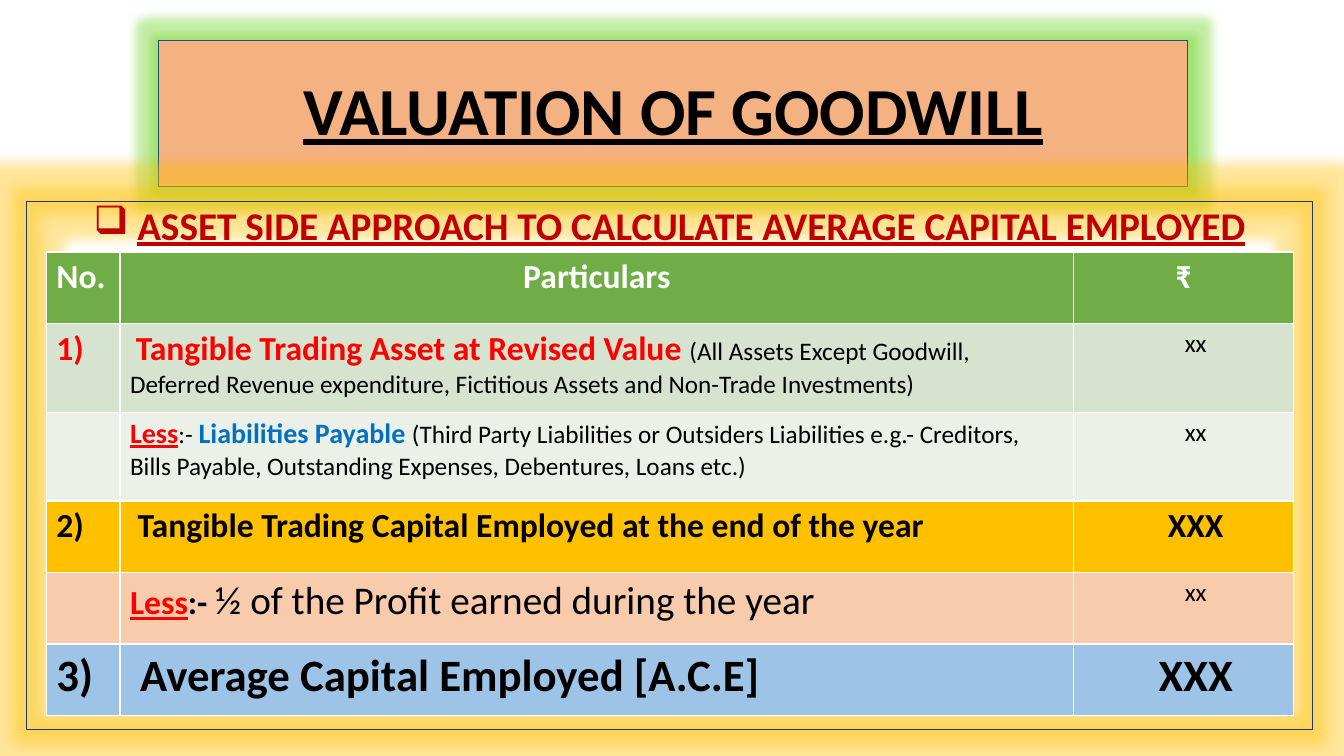
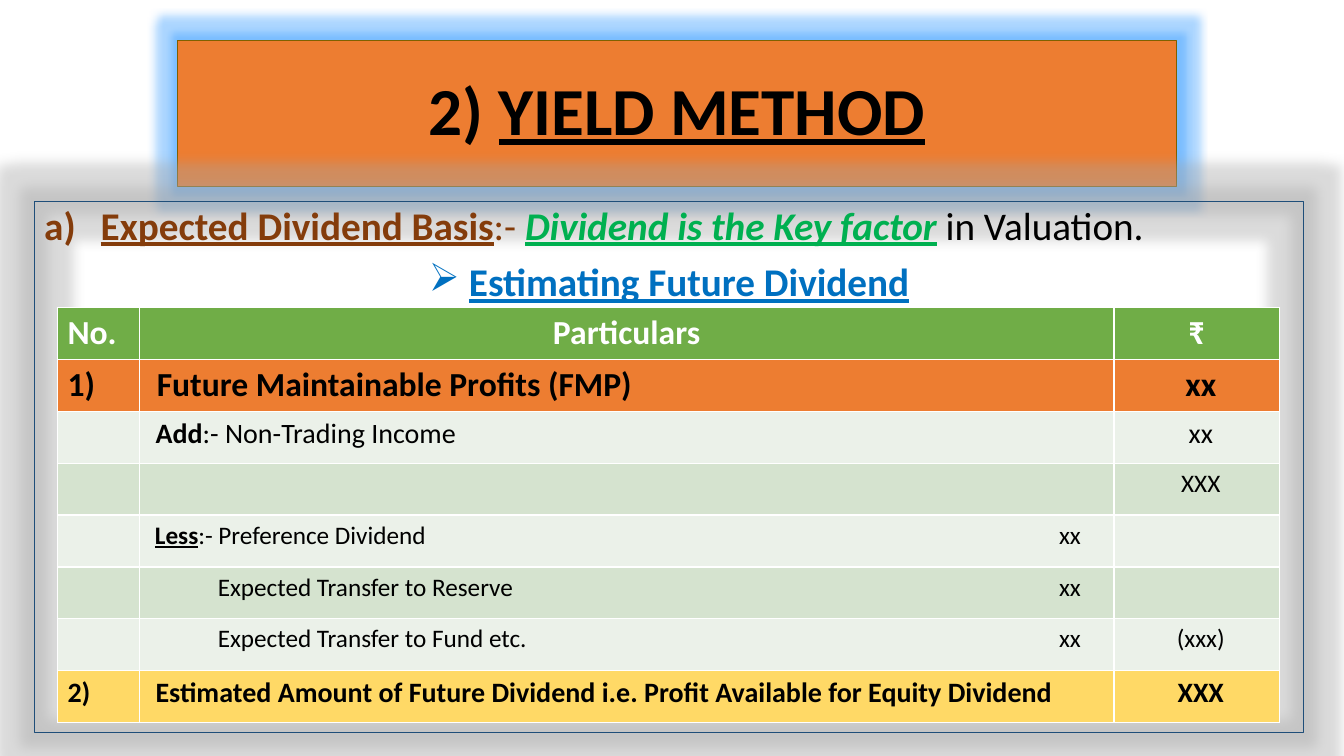
from lxml.etree import SubElement
from pptx import Presentation
from pptx.dml.color import RGBColor
from pptx.enum.shapes import MSO_SHAPE
from pptx.enum.text import MSO_ANCHOR, PP_ALIGN
from pptx.oxml.ns import qn
from pptx.util import Inches, Pt


class Theme:
    FONT = "Calibri"
    BLACK, WHITE = "000000", "FFFFFF"
    RED, DARK_RED, BROWN = "FF0000", "C00000", "843C0B"
    BLUE, GREEN = "0070C0", "00B050"
    HEADER, BAND_DARK, BAND_LIGHT = "70AD47", "D5E3CF", "EBF1E9"
    GOLD, PALE_GOLD = "FFC000", "FFD966"
    PEACH, SALMON, ORANGE, SKY = "F8CBAD", "F4B181", "ED7D31", "9DC3E6"
    NAVY, STEEL, OLIVE = "203864", "1F4E79", "806000"
    GLOW_LIME, GLOW_BLUE, GLOW_GREY = "6BD31F", "3199FF", "A5A5A5"
    TITLE, TOTAL, HEADING, ROW, SUBROW, DETAIL = 48, 32, 28, 24, 20, 18
    TITLE_GLOW, PANEL_GLOW = 11, 18


T = Theme


def add_runs(p, runs):
    """Each run is (text, size, colour, flags); flags hold b, i and u."""
    for text, size, color, flags in runs:
        r = p.add_run()
        r.text = text
        r.font.name = T.FONT
        r.font.size = Pt(size)
        r.font.color.rgb = RGBColor.from_string(color)
        r.font.bold = "b" in flags
        r.font.italic = "i" in flags
        r.font.underline = "u" in flags


def add_glow_box(s, box, line, glow, radius, fill=None):
    sp = s.shapes.add_shape(MSO_SHAPE.RECTANGLE, *map(Inches, box))
    if fill:
        sp.fill.solid()
        sp.fill.fore_color.rgb = RGBColor.from_string(fill)
    else:
        sp.fill.background()
    sp.line.color.rgb = RGBColor.from_string(line)
    sp.line.width = Pt(0.75)
    sp.shadow.inherit = False
    effects = sp._element.spPr.find(qn("a:effectLst"))
    halo = SubElement(effects, qn("a:glow"), rad=str(Pt(radius)))
    tint = SubElement(halo, qn("a:srgbClr"), val=glow)
    SubElement(tint, qn("a:alpha"), val="40000")
    sp.text_frame.word_wrap = True
    return sp.text_frame


CHECKBOX = ("buChar", {"char": "❑"})
ARROW = ("buChar", {"char": "➢"})
LETTER = ("buAutoNum", {"type": "alphaLcParenR"})

slides = [
    {
        "title_box": (1.57, 0.4, 10.21, 1.45),
        "title_look": (T.STEEL, T.GLOW_LIME, T.TITLE_GLOW, T.SALMON),
        "title": [("VALUATION OF GOODWILL", T.TITLE, T.BLACK, "bu")],
        "panel_box": (0.26, 2, 12.76, 5.24),
        "panel_look": (T.NAVY, T.GOLD, T.PANEL_GLOW),
        "headings": [
            (CHECKBOX, PP_ALIGN.CENTER, 0.25, [
                (" ", T.HEADING, T.DARK_RED, "b"),
                ("ASSET SIDE APPROACH TO CALCULATE AVERAGE CAPITAL EMPLOYED",
                 T.HEADING, T.DARK_RED, "bu")]),
        ],
        "table_at": (0.46, 2.5),
        "cols": (0.73, 9.46, 2.18),
        "row_heights": (0.71, 0.88, 0.88, 0.71, 0.71, 0.71),
        "amount_inset": 0.34,
        "rows": [
            (T.BAND_DARK,
             [("1)", T.ROW, T.RED, "b")],
             [(" ", T.DETAIL, T.BLACK, ""),
              ("Tangible Trading Asset at Revised Value ", T.ROW, T.RED, "b"),
              ("(All Assets Except Goodwill, Deferred Revenue expenditure, "
               "Fictitious Assets and Non-Trade Investments)", T.DETAIL, T.BLACK, "")],
             [("xx", T.DETAIL, T.BLACK, "")]),
            (T.BAND_LIGHT,
             [],
             [("Less", T.SUBROW, T.RED, "bu"),
              (":- ", T.DETAIL, T.BLACK, ""),
              ("Liabilities Payable ", T.SUBROW, T.BLUE, "b"),
              ("(Third Party Liabilities or Outsiders Liabilities e.g.- Creditors, "
               "Bills Payable, Outstanding Expenses, Debentures, Loans etc.)",
               T.DETAIL, T.BLACK, "")],
             [("xx", T.DETAIL, T.BLACK, "")]),
            (T.GOLD,
             [("2)", T.ROW, T.BLACK, "b")],
             [(" Tangible Trading Capital Employed at the end of the year",
               T.ROW, T.BLACK, "b")],
             [("XXX", T.ROW, T.BLACK, "b")]),
            (T.PEACH,
             [],
             [("Less", T.ROW, T.RED, "bu"),
              (":- ", T.ROW, T.BLACK, "b"),
              ("½ of the Profit earned during the year", T.HEADING, T.BLACK, "")],
             [("xx", T.DETAIL, T.BLACK, "")]),
            (T.SKY,
             [("3)", T.TOTAL, T.BLACK, "b")],
             [(" Average Capital Employed [A.C.E]", T.TOTAL, T.BLACK, "b")],
             [("XXX", T.TOTAL, T.BLACK, "b")]),
        ],
    },
    {
        "title_box": (1.76, 0.4, 9.91, 1.45),
        "title_look": (T.OLIVE, T.GLOW_BLUE, T.TITLE_GLOW, T.ORANGE),
        "title": [("2) ", T.TITLE, T.BLACK, "b"),
                  ("YIELD METHOD", T.TITLE, T.BLACK, "bu")],
        "panel_box": (0.34, 2, 12.59, 5.27),
        "panel_look": (T.STEEL, T.GLOW_GREY, T.PANEL_GLOW),
        "headings": [
            (LETTER, PP_ALIGN.LEFT, 0.56, [
                ("Expected Dividend Basis", T.HEADING, T.BROWN, "bu"),
                (":- ", T.HEADING, T.BROWN, ""),
                ("Dividend is the Key factor", T.HEADING, T.GREEN, "biu"),
                (" in Valuation.", T.HEADING, T.BLACK, "")]),
            (ARROW, PP_ALIGN.CENTER, 0.25, [
                (" ", T.HEADING, T.BLUE, "b"),
                ("Estimating Future Dividend", T.HEADING, T.BLUE, "bu")]),
        ],
        "table_at": (0.57, 3.05),
        "cols": (0.81, 9.67, 1.64),
        "row_heights": (0.515,) * 8,
        "amount_inset": 0.18,
        "rows": [
            (T.ORANGE,
             [("1)", T.ROW, T.BLACK, "b")],
             [(" Future Maintainable Profits (FMP)", T.ROW, T.BLACK, "b")],
             [("xx", T.ROW, T.BLACK, "b")]),
            (T.BAND_LIGHT,
             [],
             [(" ", T.SUBROW, T.BLACK, ""),
              ("Add", T.SUBROW, T.BLACK, "b"),
              (":- Non-Trading Income", T.SUBROW, T.BLACK, "")],
             [("xx", T.SUBROW, T.BLACK, "")]),
            (T.BAND_DARK, [], [], [("XXX", T.DETAIL, T.BLACK, "")]),
            (T.BAND_LIGHT,
             [],
             [(" ", T.DETAIL, T.BLACK, ""),
              ("Less", T.DETAIL, T.BLACK, "bu"),
              (":- Preference Dividend\txx", T.DETAIL, T.BLACK, "")],
             []),
            (T.BAND_DARK,
             [],
             [("\tExpected Transfer to Reserve\txx", T.DETAIL, T.BLACK, "")],
             []),
            (T.BAND_LIGHT,
             [],
             [("\tExpected Transfer to Fund etc.\txx", T.DETAIL, T.BLACK, "")],
             [("(xxx)", T.DETAIL, T.BLACK, "")]),
            (T.PALE_GOLD,
             [("2)", T.SUBROW, T.BLACK, "b")],
             [(" Estimated Amount of Future Dividend i.e. Profit Available for "
               "Equity Dividend", T.SUBROW, T.BLACK, "b")],
             [("XXX", T.SUBROW, T.BLACK, "b")]),
        ],
    },
]

header = (T.HEADER, *([(label, T.ROW, T.WHITE, "b")]
                      for label in ("No.", "Particulars", "₹")))
tab_stops = ((0.68, "l"), (9.24, "r"))

prs = Presentation()
prs.slide_width, prs.slide_height = Inches(13.33), Inches(7.5)

for page in slides:
    s = prs.slides.add_slide(prs.slide_layouts[6])

    tf = add_glow_box(s, page["title_box"], *page["title_look"])
    tf.vertical_anchor = MSO_ANCHOR.MIDDLE
    p = tf.paragraphs[0]
    p.alignment = PP_ALIGN.CENTER
    p.line_spacing = 0.9
    add_runs(p, page["title"])

    tf = add_glow_box(s, page["panel_box"], *page["panel_look"])
    tf.vertical_anchor = MSO_ANCHOR.TOP
    for i, (bullet, align, indent, runs) in enumerate(page["headings"]):
        p = tf.add_paragraph() if i else tf.paragraphs[0]
        p.alignment = align
        p.line_spacing = 0.9
        p.space_before = Pt(10)
        pPr = p._p.get_or_add_pPr()
        pPr.set("marL", str(Inches(indent)))
        pPr.set("indent", str(-Inches(indent)))
        tag, attributes = bullet
        SubElement(pPr, qn("a:" + tag), attributes)
        add_runs(p, runs)

    cols, heights = page["cols"], page["row_heights"]
    left, top = page["table_at"]
    table = s.shapes.add_table(len(heights), len(cols), Inches(left), Inches(top),
                               Inches(sum(cols)), Inches(sum(heights))).table
    table.horz_banding = False
    for column, width in zip(table.columns, cols):
        column.width = Inches(width)
    for row, height in zip(table.rows, heights):
        row.height = Inches(height)

    for y, (fill, *contents) in enumerate([header] + page["rows"]):
        for x, runs in enumerate(contents):
            cell = table.cell(y, x)
            cell.fill.solid()
            cell.fill.fore_color.rgb = RGBColor.from_string(fill)
            p = cell.text_frame.paragraphs[0]
            if x == 2 or (y == 0 and x == 1):
                p.alignment = PP_ALIGN.CENTER
            if x == 2 and y > 0:
                cell.margin_left = Inches(page["amount_inset"])
            if any("\t" in run[0] for run in runs):
                tabs = SubElement(p._p.get_or_add_pPr(), qn("a:tabLst"))
                for position, side in tab_stops:
                    SubElement(tabs, qn("a:tab"), pos=str(Inches(position)), algn=side)
            add_runs(p, runs)

prs.save("out.pptx")
